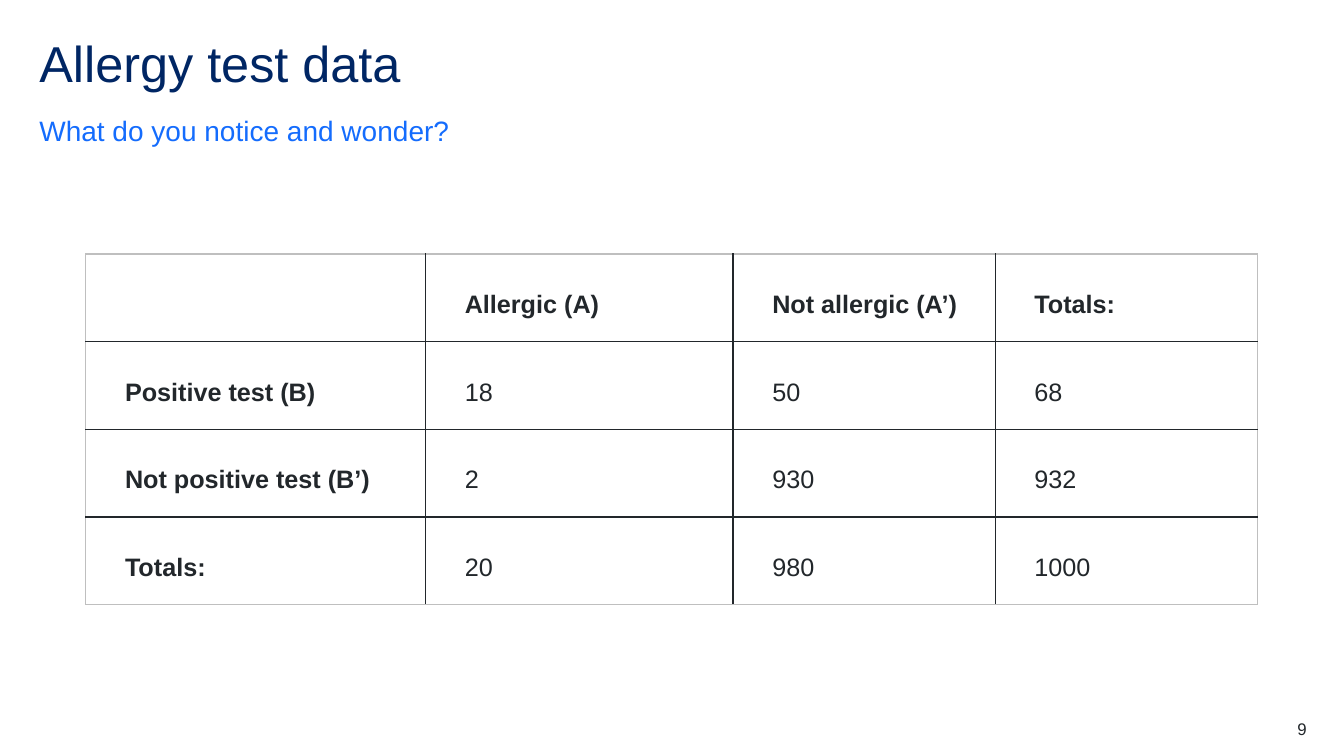
from dataclasses import dataclass

from lxml.etree import SubElement
from pptx import Presentation
from pptx.dml.color import RGBColor
from pptx.enum.text import MSO_ANCHOR as Anchor, PP_ALIGN as Align
from pptx.oxml.ns import qn
from pptx.util import Pt

PX = 9144  # EMU per px, 100 px to the inch
FONT = "Arial"
COLOURS = {
    "title": "002664",
    "subtitle": "146CFD",
    "text": "22272B",
    "frame": "BFBFBF",
}


@dataclass
class Label:
    text: str
    left: int
    top: int
    width: int
    height: int
    size: int
    colour: str
    line_spacing: float = 1.0
    space_after: int = 0
    anchor: Anchor = Anchor.TOP
    align: Align = Align.LEFT


LABELS = [
    Label("Allergy test data", 39, 39, 1256, 60, 36, "title", line_spacing=0.9),
    Label("What do you notice and wonder?", 39, 107, 1256, 39, 20, "subtitle",
          line_spacing=1.5, space_after=12, anchor=Anchor.BOTTOM),
    Label("9", 1217, 713, 79, 20, 12, "text", align=Align.RIGHT),
]

TABLE_LEFT, TABLE_TOP = 85, 252
COLUMN_WIDTHS = [337, 305, 260, 260]
ROW_HEIGHT = 87
TEST_RESULTS = [
    ["", "Allergic (A)", "Not allergic (A’)", "Totals:"],
    ["Positive test (B)", "18", "50", "68"],
    ["Not positive test (B’)", "2", "930", "932"],
    ["Totals:", "20", "980", "1000"],
]


def style_font(font, size: int, colour: str, bold: bool = False) -> None:
    font.name = FONT
    font.size = Pt(size)
    font.bold = bold
    font.color.rgb = RGBColor.from_string(COLOURS[colour])


def add_label(slide, label: Label) -> None:
    box = slide.shapes.add_textbox(label.left * PX, label.top * PX,
                                   label.width * PX, label.height * PX)
    frame = box.text_frame
    frame.word_wrap = True
    frame.vertical_anchor = label.anchor
    frame.margin_left = frame.margin_right = frame.margin_top = frame.margin_bottom = 0
    paragraph = frame.paragraphs[0]
    paragraph.text = label.text
    paragraph.alignment = label.align
    paragraph.line_spacing = label.line_spacing
    paragraph.space_after = Pt(label.space_after)
    style_font(paragraph.font, label.size, label.colour)


def add_borders(cell, outer_sides: dict[str, bool]) -> None:
    """Draw the sides of a cell, grey on the table's frame and dark inside."""
    properties = cell._tc.get_or_add_tcPr()
    for index, (side, is_outer) in enumerate(outer_sides.items()):
        line = properties.makeelement(qn(f"a:{side}"), {"w": str(Pt(1))})
        fill = SubElement(line, qn("a:solidFill"))
        colour = COLOURS["frame" if is_outer else "text"]
        SubElement(fill, qn("a:srgbClr"), val=colour)
        properties.insert(index, line)


def fill_cell(cell, text: str, bold: bool) -> None:
    cell.fill.background()
    cell.vertical_anchor = Anchor.MIDDLE
    cell.margin_left, cell.margin_right = 39 * PX, 7 * PX
    cell.margin_top = cell.margin_bottom = 0
    paragraph = cell.text_frame.paragraphs[0]
    paragraph.text = text
    paragraph.line_spacing = 1.5
    paragraph.space_before, paragraph.space_after = Pt(12), Pt(6)
    style_font(paragraph.font, 18, "text", bold)


def add_results_table(slide) -> None:
    row_count, column_count = len(TEST_RESULTS), len(COLUMN_WIDTHS)
    table = slide.shapes.add_table(
        row_count, column_count, TABLE_LEFT * PX, TABLE_TOP * PX,
        sum(COLUMN_WIDTHS) * PX, row_count * ROW_HEIGHT * PX).table
    table.horz_banding = False
    for column, width in zip(table.columns, COLUMN_WIDTHS):
        column.width = width * PX
    for row_index, values in enumerate(TEST_RESULTS):
        table.rows[row_index].height = ROW_HEIGHT * PX
        for column_index, value in enumerate(values):
            cell = table.cell(row_index, column_index)
            fill_cell(cell, value, bold=row_index == 0 or column_index == 0)
            add_borders(cell, {
                "lnL": column_index == 0,
                "lnR": column_index == column_count - 1,
                "lnT": row_index == 0,
                "lnB": row_index == row_count - 1,
            })


def main() -> None:
    presentation = Presentation()
    presentation.slide_width, presentation.slide_height = 1333 * PX, 750 * PX
    slide = presentation.slides.add_slide(presentation.slide_layouts[6])

    # Title, question and page number
    for label in LABELS:
        add_label(slide, label)

    # Two-way table of test results
    add_results_table(slide)

    presentation.save("out.pptx")


if __name__ == "__main__":
    main()
